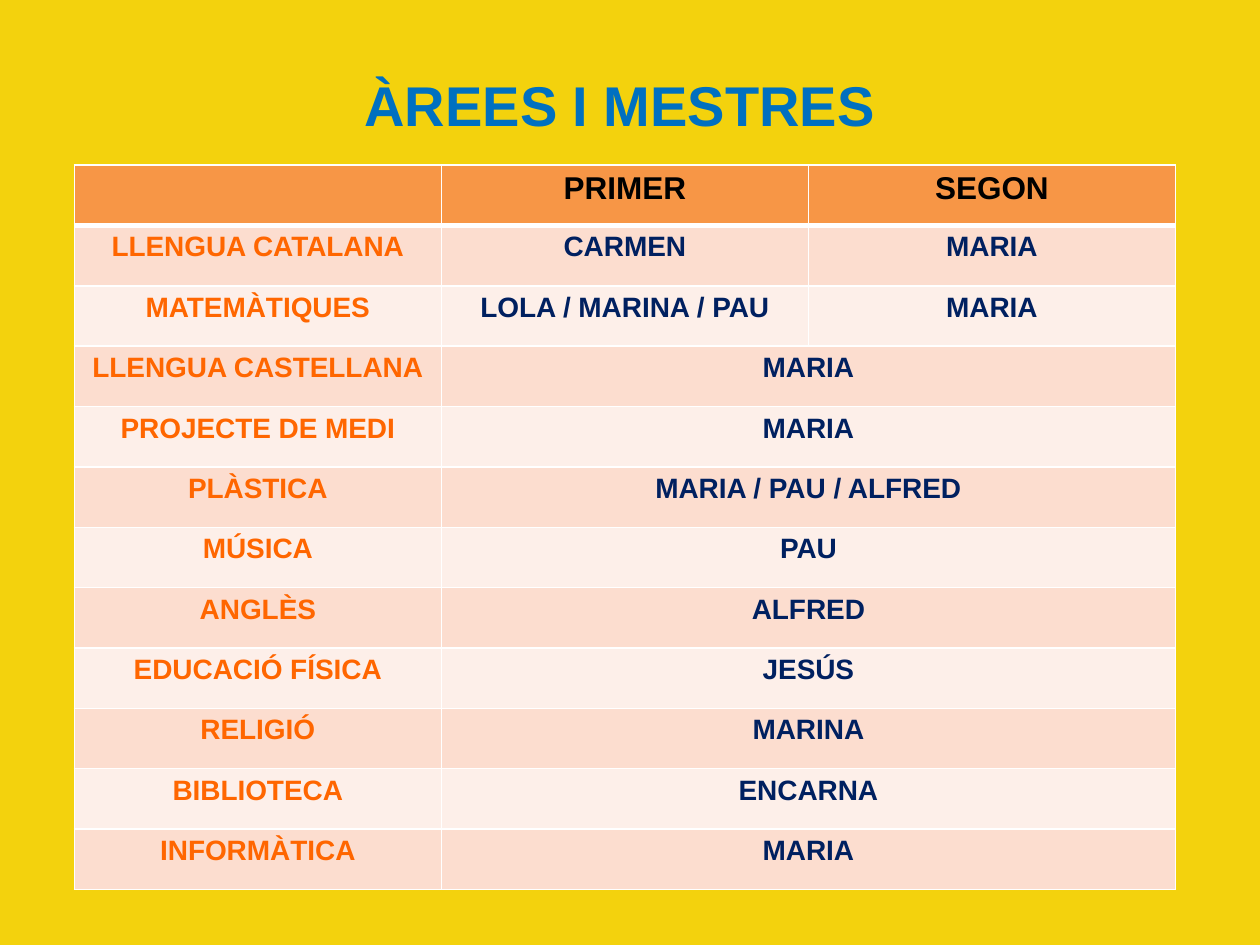
from dataclasses import dataclass

from pptx import Presentation
from pptx.dml.color import RGBColor as RGB
from pptx.enum.text import MSO_ANCHOR as Anchor, PP_ALIGN as Align
from pptx.oxml import parse_xml as to_xml
from pptx.oxml.ns import nsdecls
from pptx.util import Inches, Pt


@dataclass(frozen=True)
class Theme:
    font: str = "Arial"
    back: str = "F3D20D"
    title: str = "0070C0"
    head: str = "F79646"
    black: str = "000000"
    area: str = "FF6600"
    staff: str = "002060"
    bands: tuple = ("FCDDCF", "FDEFE9")
    line: str = "FFFFFF"
    big: int = 32
    mid: int = 18
    small: int = 16
    thin: int = 1
    thick: int = 3


HEADS = ["", "PRIMER", "SEGON"]
AREAS = [
    ("LLENGUA CATALANA", "CARMEN", "MARIA"),
    ("MATEMÀTIQUES", "LOLA / MARINA / PAU", "MARIA"),
    ("LLENGUA CASTELLANA", "MARIA"),
    ("PROJECTE DE MEDI", "MARIA"),
    ("PLÀSTICA", "MARIA / PAU / ALFRED"),
    ("MÚSICA", "PAU"),
    ("ANGLÈS", "ALFRED"),
    ("EDUCACIÓ FÍSICA", "JESÚS"),
    ("RELIGIÓ", "MARINA"),
    ("BIBLIOTECA", "ENCARNA"),
    ("INFORMÀTICA", "MARIA"),
]


class Deck:
    def __init__(self, theme):
        self.theme = theme
        self.show = Presentation()
        self.show.slide_width, self.show.slide_height = Inches(10), Inches(7.5)
        self.slide = self.show.slides.add_slide(self.show.slide_layouts[0])
        sub = self.slide.placeholders[1].element
        sub.getparent().remove(sub)
        fill = self.slide.background.fill
        fill.solid()
        fill.fore_color.rgb = RGB.from_string(theme.back)

    def label(self, frame, text, size, color):
        para = frame.paragraphs[0]
        para.alignment = Align.CENTER
        run = para.add_run()
        run.text = text
        form = {"name": self.theme.font, "size": Pt(size), "bold": True}
        for key, value in form.items():
            setattr(run.font, key, value)
        run.font.color.rgb = RGB.from_string(color)

    def title(self, text, left, top, width, height):
        shape = self.slide.shapes.title
        place = {"left": left, "top": top, "width": width, "height": height}
        for key, value in place.items():
            setattr(shape, key, Inches(value))
        shape.text_frame.vertical_anchor = Anchor.MIDDLE
        self.label(shape.text_frame, text, self.theme.big, self.theme.title)

    def paint(self, cell, color, wide):
        cell.fill.solid()
        cell.fill.fore_color.rgb = RGB.from_string(color)
        props = cell._tc.get_or_add_tcPr()
        for spot, side in enumerate("LRTB"):
            width = self.theme.thick if side == wide else self.theme.thin
            props.insert(spot, to_xml(
                f'<a:ln{side} {nsdecls("a")} w="{Pt(width)}"><a:solidFill>'
                f'<a:srgbClr val="{self.theme.line}"/></a:solidFill></a:ln{side}>'))

    def table(self, heads, rows, left, top, width, height):
        look = self.theme
        frame = self.slide.shapes.add_table(
            len(rows) + 1, len(heads),
            Inches(left), Inches(top), Inches(width), Inches(height))
        grid = frame.table
        for row, texts in enumerate([heads, *rows]):
            color = look.bands[(row - 1) % 2] if row else look.head
            wide = {0: "B", 1: "T"}.get(row)
            for col in range(len(heads)):
                self.paint(grid.cell(row, col), color, wide)
            if len(texts) < len(heads):
                grid.cell(row, 1).merge(grid.cell(row, len(heads) - 1))
            for col, text in enumerate(texts):
                ink = look.staff if col else look.area
                size = look.small
                if row == 0:
                    ink, size = look.black, look.mid
                if text:
                    self.label(grid.cell(row, col).text_frame, text, size, ink)

    def save(self):
        self.show.save("out.pptx")


def main():
    deck = Deck(Theme())
    deck.title("ÀREES I MESTRES", 0.67, 0.36, 8.5, 0.94)
    deck.table(HEADS, AREAS, 0.59, 1.31, 8.74, 5.75)
    deck.save()


if __name__ == "__main__":
    main()
